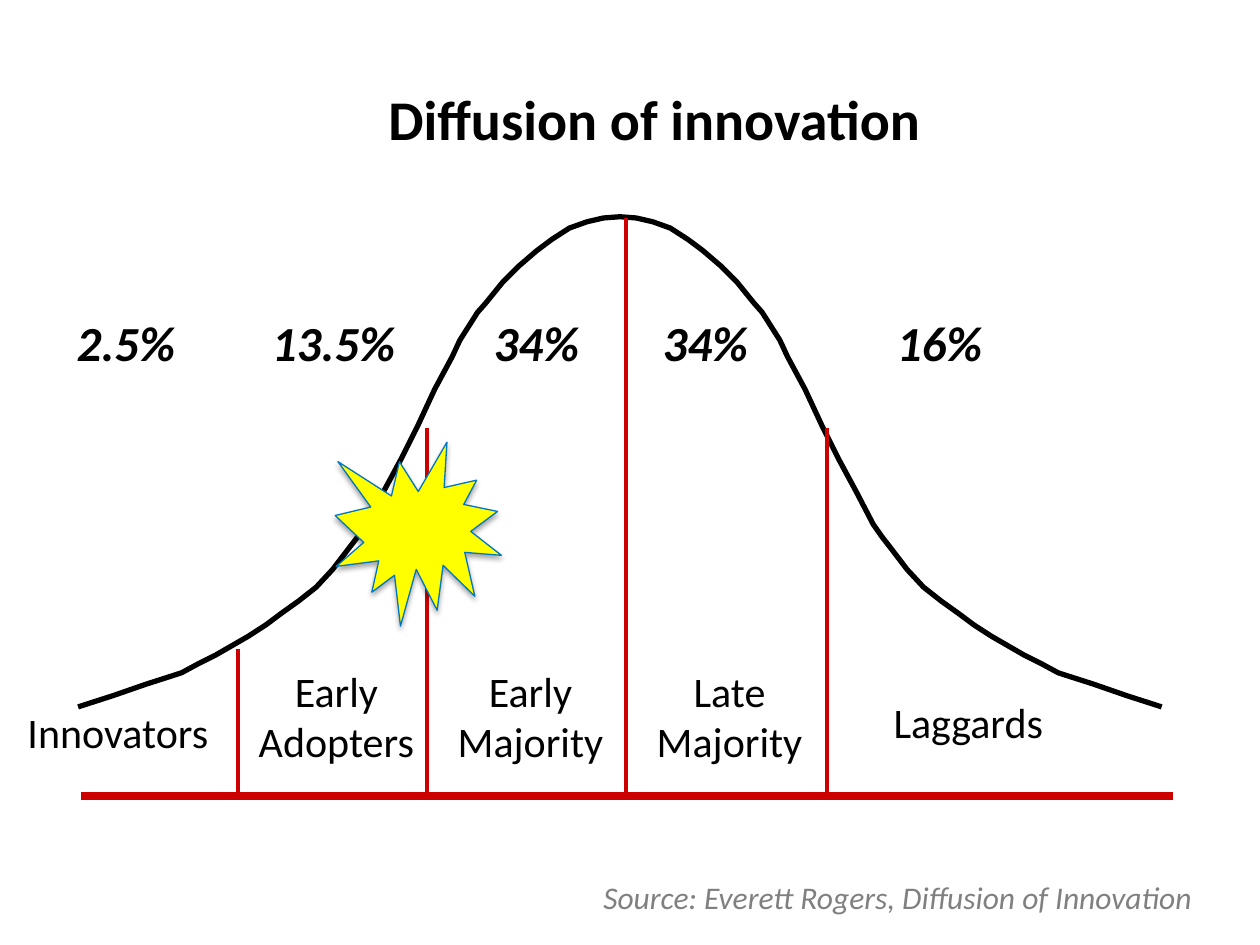
"""Builds the diffusion of innovation slide with its adopter curve."""
from lxml import etree
from pptx import Presentation
from pptx.dml.color import RGBColor
from pptx.enum.shapes import MSO_CONNECTOR, MSO_SHAPE
from pptx.enum.text import MSO_ANCHOR, MSO_AUTO_SIZE, PP_ALIGN
from pptx.oxml.ns import qn
from pptx.util import Inches, Pt

LEFT, CENTER = PP_ALIGN.LEFT, PP_ALIGN.CENTER
MIDDLE = MSO_ANCHOR.MIDDLE
FIT_SHAPE = MSO_AUTO_SIZE.SHAPE_TO_FIT_TEXT
STRAIGHT = MSO_CONNECTOR.STRAIGHT
BURST = MSO_SHAPE.EXPLOSION1

BLACK = RGBColor(0x00, 0x00, 0x00)
RED = RGBColor(0xCC, 0x00, 0x00)
GRAY = RGBColor(0x80, 0x80, 0x80)
YELLOW = RGBColor(0xFF, 0xFF, 0x00)
BLUE = RGBColor(0x00, 0x76, 0xBE)
FONT = "Calibri"

TITLE = "Diffusion of innovation"
SOURCE = "Source: Everett Rogers, Diffusion of Innovation"

# label, (left, top, width, height), alignment
STAGES = [
    ("Innovators", (0.12, 5.56, 1.67, 0.5), LEFT),
    ("Early\nAdopters", (1.94, 5.23, 1.46, 0.91), CENTER),
    ("Early\nMajority", (3.52, 5.23, 1.38, 0.91), CENTER),
    ("Late\nMajority", (5.1, 5.23, 1.38, 0.91), CENTER),
    ("Laggards", (6.98, 5.48, 1.41, 0.5), CENTER),
]
SHARES = [("2.5%", 0.51, 1.09), ("13.5%", 2.06, 1.32), ("34%", 3.82, 0.99),
          ("34%", 5.16, 0.99), ("16%", 7.02, 0.99)]
SHARE_TOP, SHARE_HEIGHT = 2.43, 0.57

AXIS_LEFT, AXIS_RIGHT, AXIS_Y = 0.64, 9.31, 6.32
DIVIDERS = [(1.89, 5.15), (3.39, 3.4), (4.97, 1.73), (6.56, 3.4)]

PEAK = (4.92, 1.72)
RISE = [
    (0.62, 5.61), (0.9, 5.52), (1.16, 5.43), (1.44, 5.34), (1.57, 5.27),
    (1.71, 5.2), (1.97, 5.05), (2.11, 4.96), (2.23, 4.87), (2.37, 4.77),
    (2.51, 4.66), (2.64, 4.52), (2.77, 4.35), (2.84, 4.26), (2.91, 4.16),
    (3.04, 3.91), (3.18, 3.65), (3.32, 3.37), (3.45, 3.09), (3.59, 2.83),
    (3.65, 2.7), (3.72, 2.59), (3.79, 2.48), (3.86, 2.4), (3.99, 2.24),
    (4.12, 2.11), (4.26, 1.99), (4.38, 1.9), (4.52, 1.81), (4.66, 1.76),
    (4.79, 1.73),
]


def inches(values):
    return [Inches(value) for value in values]


def style(font, size, color=BLACK, bold=False, italic=False):
    font.name, font.size, font.bold, font.italic = FONT, Pt(size), bold, italic
    font.color.rgb = color


def add_text(slide, text, box, size, align=LEFT, **look):
    frame = slide.shapes.add_textbox(*inches(box)).text_frame
    frame.word_wrap = False
    frame.auto_size = FIT_SHAPE
    frame.text = text
    for paragraph in frame.paragraphs:
        paragraph.alignment = align
        style(paragraph.font, size, **look)


def add_line(slide, ends, width):
    line = slide.shapes.add_connector(STRAIGHT, *inches(ends))
    line.line.color.rgb = RED
    line.line.width = Pt(width)
    etree.SubElement(line._element.spPr, qn("a:effectLst"))


def add_title(slide):
    title = slide.shapes.title
    title.left, title.top, title.width, title.height = inches((0.55, 0.31, 8.86, 1.25))
    frame = title.text_frame
    frame.text = TITLE
    frame.vertical_anchor = MIDDLE
    frame.margin_left = Inches(0.53)
    frame.paragraphs[0].alignment = CENTER
    style(frame.paragraphs[0].font, 32, bold=True)


def add_curve(slide):
    fall = [(2 * PEAK[0] - x, y) for x, y in reversed(RISE)]
    start, *rest = [inches(point) for point in RISE + [PEAK] + fall]
    builder = slide.shapes.build_freeform(*start)
    builder.add_line_segments(rest, close=False)
    curve = builder.convert_to_shape()
    curve.shadow.inherit = False
    curve.fill.background()
    curve.line.color.rgb = BLACK
    curve.line.width = Pt(3)


def add_burst(slide):
    burst = slide.shapes.add_shape(BURST, *inches((2.66, 3.51, 1.32, 1.46)))
    burst.fill.solid()
    burst.fill.fore_color.rgb = YELLOW
    burst.line.color.rgb = BLUE
    burst.line.width = Pt(0.75)


def main():
    deck = Presentation()
    deck.slide_width, deck.slide_height = inches((10, 7.5))
    slide = deck.slides.add_slide(deck.slide_layouts.get_by_name("Title Only"))
    add_title(slide)
    add_curve(slide)
    add_line(slide, (AXIS_LEFT, AXIS_Y, AXIS_RIGHT, AXIS_Y), 4.5)
    for x, top in DIVIDERS:
        add_line(slide, (x, top, x, AXIS_Y), 2.25)
    for label, box, align in STAGES:
        add_text(slide, label, box, 24, align)
    add_text(slide, SOURCE, (4.69, 6.92, 5.06, 0.4), 18, color=GRAY, italic=True)
    for share, left, width in SHARES:
        add_text(slide, share, (left, SHARE_TOP, width, SHARE_HEIGHT), 28,
                 bold=True, italic=True)
    add_burst(slide)
    deck.save("out.pptx")


if __name__ == "__main__":
    main()
